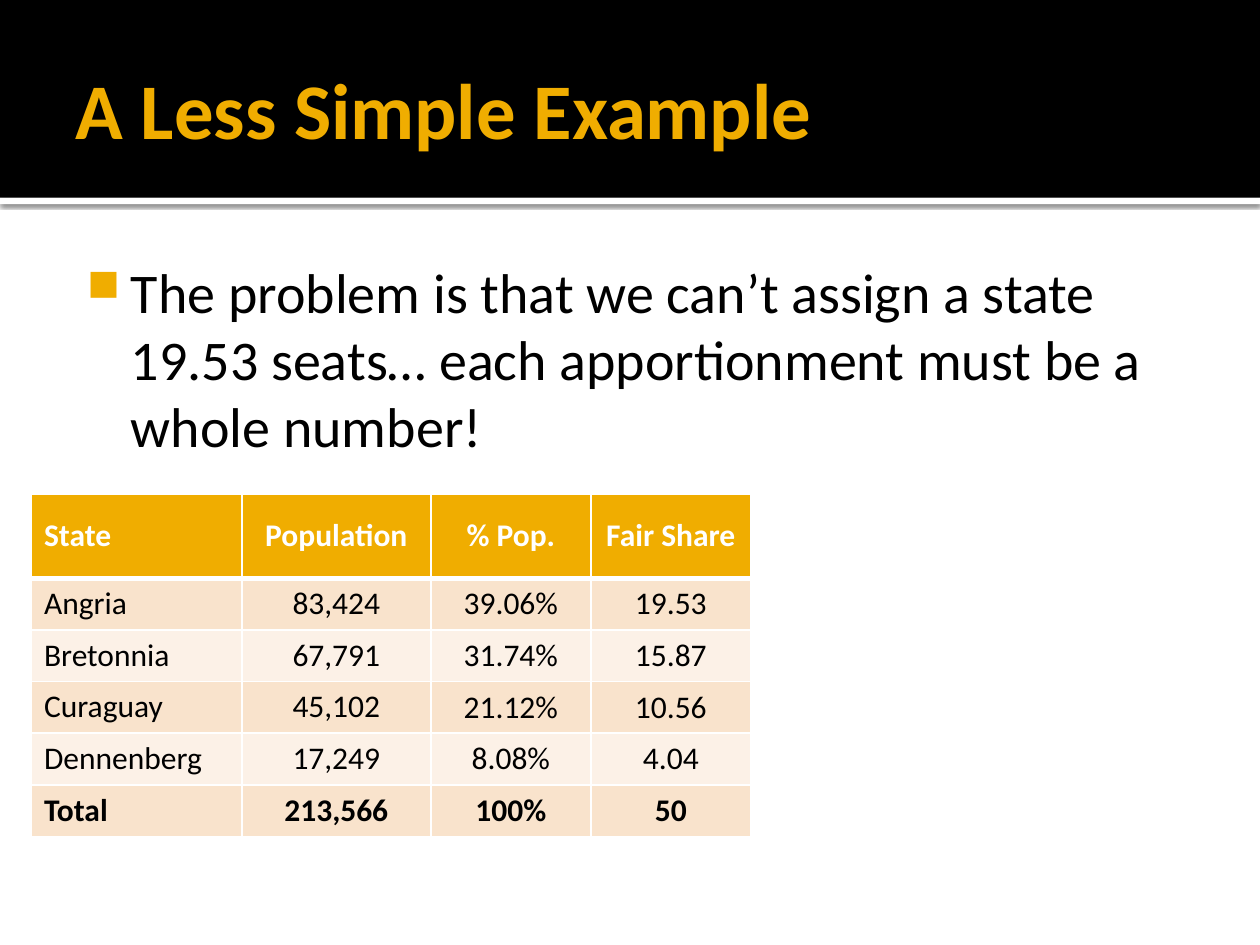
from lxml import etree
from pptx import Presentation
from pptx.dml.color import RGBColor
from pptx.enum.shapes import MSO_SHAPE as Shape
from pptx.enum.text import MSO_ANCHOR as Anchor, PP_ALIGN as Align
from pptx.oxml.ns import qn
from pptx.util import Inches, Pt

BLACK = RGBColor(0x00, 0x00, 0x00)
WHITE = RGBColor(0xFF, 0xFF, 0xFF)
GOLD = RGBColor(0xF0, 0xAD, 0x00)
BANDS = (RGBColor(0xF9, 0xE3, 0xCC), RGBColor(0xFC, 0xF1, 0xE7))
FONT = "Calibri"

STATES = [
    ("State", "Population", "% Pop.", "Fair Share"),
    ("Angria", "83,424", "39.06%", "19.53"),
    ("Bretonnia", "67,791", "31.74%", "15.87"),
    ("Curaguay", "45,102", "21.12%", "10.56"),
    ("Dennenberg", "17,249", "8.08%", "4.04"),
    ("Total", "213,566", "100%", "50"),
]
COLUMN_WIDTHS = (1.67, 1.5, 1.27, 1.27)
HEADER_HEIGHT, ROW_HEIGHT = 0.67, 0.41


def add_element(parent, tag, **attributes):
    return etree.SubElement(parent, qn(tag), attributes)


def style_text(paragraph, size, color, bold=False):
    for run in paragraph.runs:
        font = run.font
        font.name, font.size, font.bold = FONT, Pt(size), bold
        font.color.rgb = color


def add_bar(slide, box, color):
    bar = slide.shapes.add_shape(Shape.RECTANGLE, *map(Inches, box))
    bar.shadow.inherit = False
    bar.fill.solid()
    bar.fill.fore_color.rgb = color
    bar.line.fill.background()
    return bar


def add_text(slide, box, insets, text):
    frame = slide.shapes.add_textbox(*map(Inches, box)).text_frame
    frame.word_wrap = True
    (frame.margin_left, frame.margin_top,
     frame.margin_right, frame.margin_bottom) = map(Inches, insets)
    frame.text = text
    return frame


def add_header(slide, box):
    left, top, width, height = box
    # White rule with a soft shadow below the black band
    rule = add_bar(slide, (left, top + height, width, 0.05), WHITE)
    effects = rule._element.spPr.find(qn("a:effectLst"))
    shadow = add_element(effects, "a:outerShdw", blurRad=str(Pt(2.5)),
                         dist=str(Pt(0.8)), dir="5400000", rotWithShape="0")
    shade = add_element(shadow, "a:srgbClr", val=str(BLACK))
    add_element(shade, "a:alpha", val="60000")
    add_bar(slide, box, BLACK)
    # Title
    title = add_text(slide, (left + 0.5, top + 0.17, width - 1, 1.37),
                     (0.1, 0.05, 0.05, 0.05), "A Less Simple Example")
    title.vertical_anchor = Anchor.MIDDLE
    style_text(title.paragraphs[0], 45, GOLD, bold=True)


def add_problem(slide, box):
    problem = add_text(
        slide, box, (0.06, 0.1, 0.1, 0.05),
        "The problem is that we can’t assign a state 19.53 seats… "
        "each apportionment must be a whole number!").paragraphs[0]
    # Gold square bullet with a hanging indent
    properties = problem._p.get_or_add_pPr()
    properties.set("marL", str(Inches(0.48)))
    properties.set("indent", str(Inches(-0.35)))
    bullet_color = add_element(properties, "a:buClr")
    add_element(bullet_color, "a:srgbClr", val=str(GOLD))
    add_element(properties, "a:buSzPct", val="80000")
    add_element(properties, "a:buChar", char="■")
    style_text(problem, 32, BLACK)


def set_borders(cell, bottom):
    properties = cell._tc.get_or_add_tcPr()
    widths = {"a:lnL": 1, "a:lnR": 1, "a:lnT": 1, "a:lnB": bottom}
    for position, (tag, width) in enumerate(widths.items()):
        line = etree.Element(qn(tag), w=str(Pt(width)))
        fill = add_element(line, "a:solidFill")
        add_element(fill, "a:srgbClr", val=str(WHITE))
        properties.insert(position, line)


def add_states_table(slide, box):
    table = slide.shapes.add_table(
        len(STATES), len(COLUMN_WIDTHS), *map(Inches, box)).table
    for column, width in zip(table.columns, COLUMN_WIDTHS):
        column.width = Inches(width)
    for r, values in enumerate(STATES):
        is_header, is_total = r == 0, r == len(STATES) - 1
        table.rows[r].height = Inches(HEADER_HEIGHT if is_header else ROW_HEIGHT)
        for c, value in enumerate(values):
            cell = table.cell(r, c)
            cell.text = value
            cell.fill.solid()
            cell.fill.fore_color.rgb = GOLD if is_header else BANDS[(r - 1) % 2]
            cell.vertical_anchor = (
                Anchor.MIDDLE if is_header or c >= 2 else Anchor.TOP)
            paragraph = cell.text_frame.paragraphs[0]
            paragraph.alignment = Align.CENTER if c else Align.LEFT
            style_text(paragraph, 18, WHITE if is_header else BLACK,
                       bold=is_header or is_total)
            set_borders(cell, bottom=3 if is_header else 1)
            if r == 1:
                # The rule under the header is shared with the first row
                cell._tc.tcPr.find(qn("a:lnT")).set("w", str(Pt(3)))


def main():
    deck = Presentation()
    deck.slide_width, deck.slide_height = Inches(10), Inches(7.5)
    slide = deck.slides.add_slide(deck.slide_layouts[6])
    add_header(slide, (0, 0, 10, 1.57))
    add_problem(slide, (0.5, 1.94, 9, 5.06))
    add_states_table(slide, (0.25, 3.92, 5.7, 2.69))
    deck.save("out.pptx")


if __name__ == "__main__":
    main()
